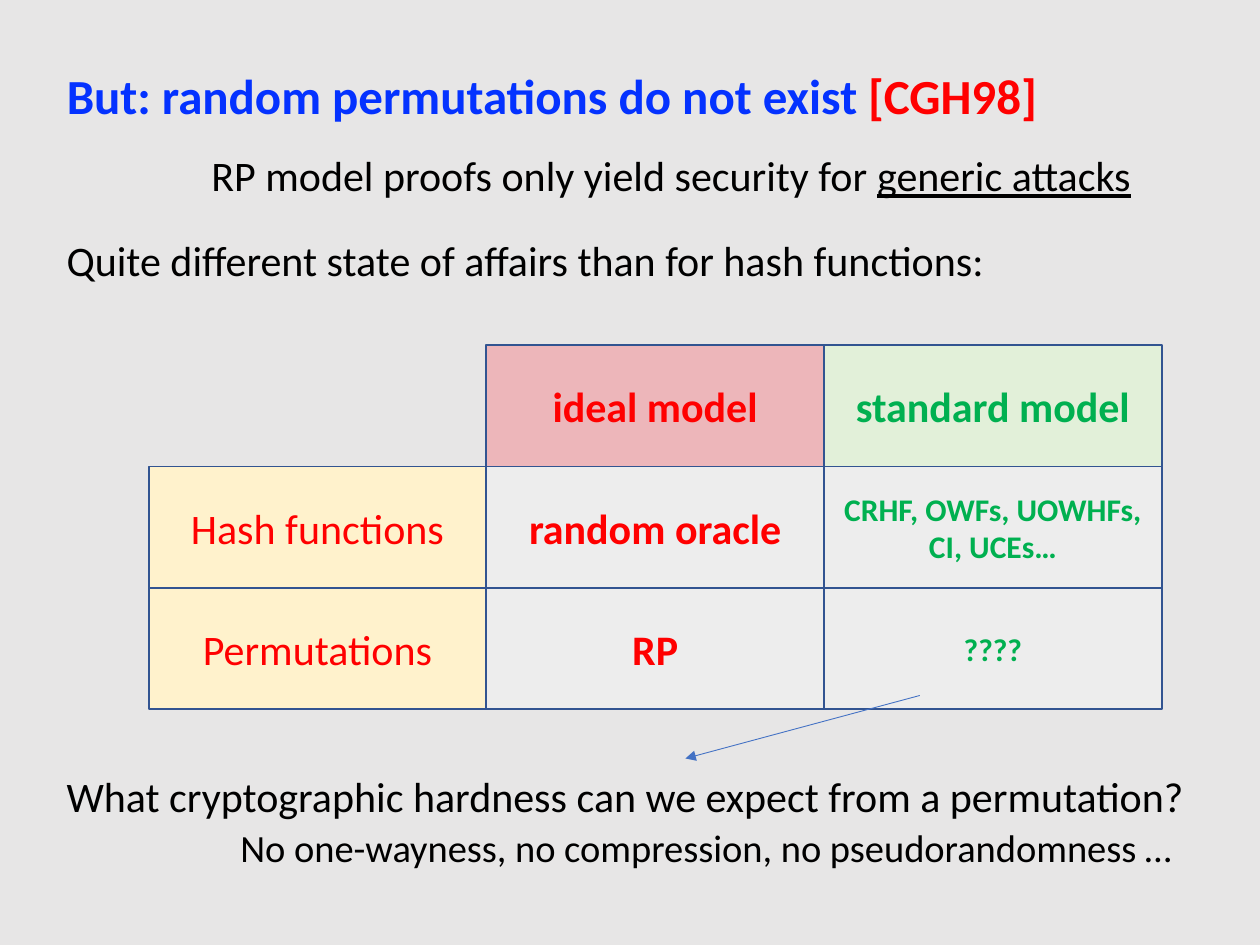
from lxml import etree
from pptx import Presentation
from pptx.dml.color import RGBColor
from pptx.enum.shapes import MSO_CONNECTOR, MSO_SHAPE
from pptx.enum.text import MSO_ANCHOR, MSO_AUTO_SIZE, PP_ALIGN
from pptx.oxml.ns import qn
from pptx.util import Pt

PX = 9144  # EMU per px, 100 px to the inch


class Theme:
    font = "Calibri"
    bg, text, title = "E7E6E6", "000000", "0432FF"
    red, green = "FF0000", "00B050"
    row_fill, ideal_fill, standard_fill, cell_fill = "FFF2CC", "EDB6BA", "E2F0D9", "EDEDED"
    border, arrow = "325491", "4472C4"
    title_size, body_size, note_size, small_size = 28, 24, 22, 18


T = Theme

# Content: runs are (text, colour, bold, underline)
TITLE = [("But: random permutations do not exist ", T.title, True, False),
         ("[CGH98]", T.red, True, False)]
TITLE_BOX = (43, 47, 903, 57)

LINES = [  # box, size, alignment, runs
    ((158, 114, 826, 50), T.body_size, PP_ALIGN.LEFT,
     [("RP model proofs only yield security for ", T.text, False, False),
      ("generic attacks", T.text, False, True)]),
    ((43, 181, 757, 50), T.body_size, PP_ALIGN.LEFT,
     [("Quite different state of affairs than for hash functions:", T.text, False, False)]),
    ((43, 607, 925, 50), T.body_size, PP_ALIGN.LEFT,
     [("What cryptographic hardness can we expect from a permutation?", T.text, False, False)]),
    ((63, 649, 884, 47), T.note_size, PP_ALIGN.RIGHT,
     [("No one-wayness, no compression, no pseudorandomness … ", T.text, False, False)]),
]

GRID_BOX = (118, 274, 804, 289)
GRID = [
    [None, "ideal model", "standard model"],
    ["Hash functions", "random oracle", "CRHF, OWFs, UOWHFs, CI, UCEs…"],
    ["Permutations", "RP", "????"],
]
HEAD_FILLS = [None, T.ideal_fill, T.standard_fill]
COLUMN_COLOURS = [T.red, T.red, T.green]

ARROW = (730, 552, 544, 602)


def emu(*values):
    return [round(v * PX) for v in values]


def rgb(value):
    return RGBColor.from_string(value)


def write(tf, runs, size, align, anchor):
    tf.word_wrap = True
    tf.auto_size = MSO_AUTO_SIZE.NONE
    tf.vertical_anchor = anchor
    p = tf.paragraphs[0]
    p.alignment = align
    p.line_spacing = 1.0
    for text, colour, bold, underline in runs:
        r = p.add_run()
        r.text = text
        font = r.font
        font.name, font.size = T.font, Pt(size)
        font.bold, font.underline = bold, underline
        font.color.rgb = rgb(colour)


def add_cell(slide, box, text, fill, colour, bold, size):
    sp = slide.shapes.add_shape(MSO_SHAPE.RECTANGLE, *emu(*box))
    sp.shadow.inherit = False
    sp.fill.solid()
    sp.fill.fore_color.rgb = rgb(fill)
    sp.line.color.rgb = rgb(T.border)
    sp.line.width = Pt(1)
    write(sp.text_frame, [(text, colour, bold, False)], size,
          PP_ALIGN.CENTER, MSO_ANCHOR.MIDDLE)


def add_grid(slide):
    left, top, width, height = GRID_BOX
    w, h = width / len(GRID[0]), height / len(GRID)
    for row, texts in enumerate(GRID):
        for col, text in enumerate(texts):
            if text is None:
                continue
            if row == 0:
                fill = HEAD_FILLS[col]
            else:
                fill = T.row_fill if col == 0 else T.cell_fill
            size = T.small_size if row and col == 2 else T.body_size
            add_cell(slide, (left + col * w, top + row * h, w, h), text,
                     fill, COLUMN_COLOURS[col], col > 0, size)


def add_arrow(slide):
    cx = slide.shapes.add_connector(MSO_CONNECTOR.STRAIGHT, *emu(*ARROW))
    cx.line.color.rgb = rgb(T.arrow)
    cx.line.width = Pt(0.5)
    etree.SubElement(cx.line._get_or_add_ln(), qn("a:tailEnd"), type="triangle")
    etree.SubElement(cx._element.spPr, qn("a:effectLst"))


def main():
    prs = Presentation()
    prs.slide_width, prs.slide_height = emu(1000, 750)
    slide = prs.slides.add_slide(prs.slide_layouts[5])
    slide.background.fill.solid()
    slide.background.fill.fore_color.rgb = rgb(T.bg)

    # Title
    title = slide.shapes.title
    title.left, title.top, title.width, title.height = emu(*TITLE_BOX)
    write(title.text_frame, TITLE, T.title_size, PP_ALIGN.LEFT, MSO_ANCHOR.TOP)

    # Statements around the grid
    for box, size, align, runs in LINES:
        sp = slide.shapes.add_textbox(*emu(*box))
        write(sp.text_frame, runs, size, align, MSO_ANCHOR.TOP)

    # Comparison grid and its arrow
    add_grid(slide)
    add_arrow(slide)
    prs.save("out.pptx")


if __name__ == "__main__":
    main()
